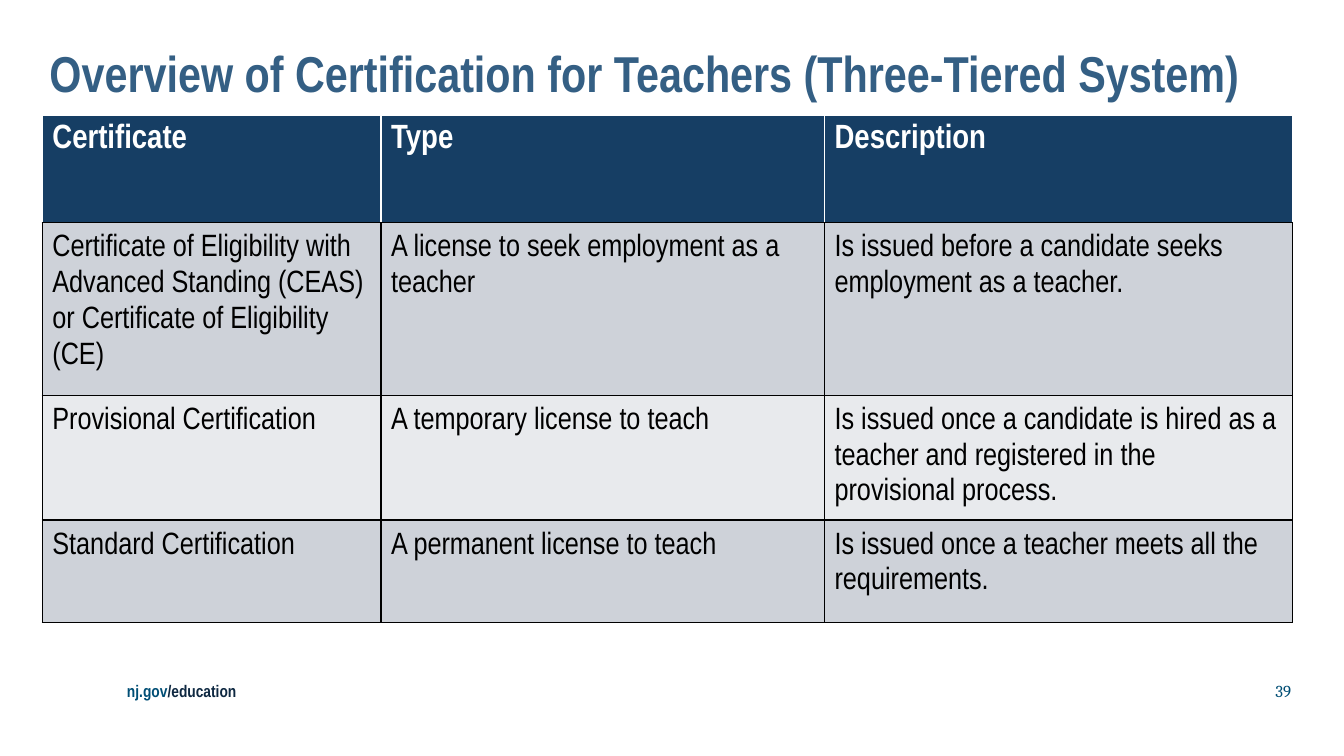
from lxml import etree
from pptx import Presentation
from pptx.dml.color import RGBColor
from pptx.enum.text import MSO_ANCHOR, MSO_AUTO_SIZE, PP_ALIGN
from pptx.oxml.ns import qn
from pptx.util import Pt

TOP, MIDDLE = MSO_ANCHOR.TOP, MSO_ANCHOR.MIDDLE
LEFT, RIGHT = PP_ALIGN.LEFT, PP_ALIGN.RIGHT
NO_FIT = MSO_AUTO_SIZE.NONE
SANS, SERIF = "Arial Narrow", "Cambria"
COLORS = {
    "title": "345F84", "head": "163E64", "odd": "CED2D9", "even": "E8EAED",
    "white": "FFFFFF", "black": "000000", "link": "004E75", "navy": "0E2841",
}
COLS = (241.92, 316.8, 334.08)
ROWS = (77.04, 123.12, 89.28, 73.44)
CELLS = (
    ("Certificate", "Type", "Description"),
    ("Certificate of Eligibility with Advanced Standing (CEAS) or Certificate of Eligibility (CE)",
     "A license to seek employment as a teacher",
     "Is issued before a candidate seeks employment as a teacher."),
    ("Provisional Certification",
     "A temporary license to teach",
     "Is issued once a candidate is hired as a teacher and registered in the provisional process."),
    ("Standard Certification",
     "A permanent license to teach",
     "Is issued once a teacher meets all the requirements."),
)


def color(name):
    return RGBColor.from_string(COLORS[name])


def style(run, size, shade, bold=False, face=SANS):
    font = run.font
    font.name, font.size, font.bold = face, Pt(size), bold
    font.color.rgb = color(shade)


def set_frame(frame, anchor):
    frame.margin_left = frame.margin_right = 0
    frame.margin_top = frame.margin_bottom = 0
    frame.word_wrap = True
    frame.auto_size = NO_FIT
    frame.vertical_anchor = anchor


def add_title(slide, text, left, top, width, height):
    title = slide.shapes.title
    title.left, title.top = Pt(left), Pt(top)
    title.width, title.height = Pt(width), Pt(height)
    frame = title.text_frame
    frame.text = text
    set_frame(frame, TOP)
    para = frame.paragraphs[0]
    para.alignment, para.line_spacing = LEFT, Pt(42)
    style(para.runs[0], 36, "title", True)


def add_border(cell, side, shade):
    line = etree.SubElement(cell._tc.get_or_add_tcPr(), qn("a:ln" + side), w=str(Pt(1)))
    fill = etree.SubElement(line, qn("a:solidFill"))
    etree.SubElement(fill, qn("a:srgbClr"), val=COLORS[shade])


def fill_cell(cell, text, row):
    head = row == 0
    for side in "LRTB":
        add_border(cell, side, "white" if head and side != "B" else "black")
    cell.fill.solid()
    cell.fill.fore_color.rgb = color("head" if head else "odd" if row % 2 else "even")
    cell.margin_left = cell.margin_right = Pt(7.2)
    cell.margin_top = cell.margin_bottom = Pt(3.6)
    cell.text_frame.text = text
    para = cell.text_frame.paragraphs[0]
    para.line_spacing = Pt(25.5)
    style(para.runs[0], 24 if head else 22, "white" if head else "black", head)


def add_grid(slide, left, top):
    table = slide.shapes.add_table(
        len(ROWS), len(COLS), Pt(left), Pt(top), Pt(sum(COLS)), Pt(sum(ROWS))).table
    for col, width in zip(table.columns, COLS):
        col.width = Pt(width)
    for row, (height, texts) in enumerate(zip(ROWS, CELLS)):
        table.rows[row].height = Pt(height)
        for col, text in enumerate(texts):
            fill_cell(table.cell(row, col), text, row)


def add_note(slide, parts, left, top, width, height, align=LEFT):
    """Add one footer line from (text, colour, bold, font) parts."""
    box = slide.shapes.add_textbox(Pt(left), Pt(top), Pt(width), Pt(height))
    set_frame(box.text_frame, MIDDLE)
    para = box.text_frame.paragraphs[0]
    para.alignment = align
    for text, shade, bold, face in parts:
        run = para.add_run()
        run.text = text
        style(run, 12, shade, bold, face)


def add_footer(slide, left, top, width, height):
    half = 404.64
    site = (("nj.gov", "link", True, SANS), ("/education", "navy", True, SANS))
    add_note(slide, site, left, top, half, height)
    page = (("39", "link", False, SERIF),)
    add_note(slide, page, left + width - half, top, half, height, RIGHT)


def main():
    deck = Presentation()
    deck.slide_width, deck.slide_height = Pt(960), Pt(540)
    slide = deck.slides.add_slide(deck.slide_layouts[5])
    add_footer(slide, 90.72, 486, 831.6, 14.4)
    add_title(slide, "Overview of Certification for Teachers (Three-Tiered System)",
              35.28, 30.96, 887.76, 33.12)
    add_grid(slide, 30.24, 82.08)
    deck.save("out.pptx")


if __name__ == "__main__":
    main()
